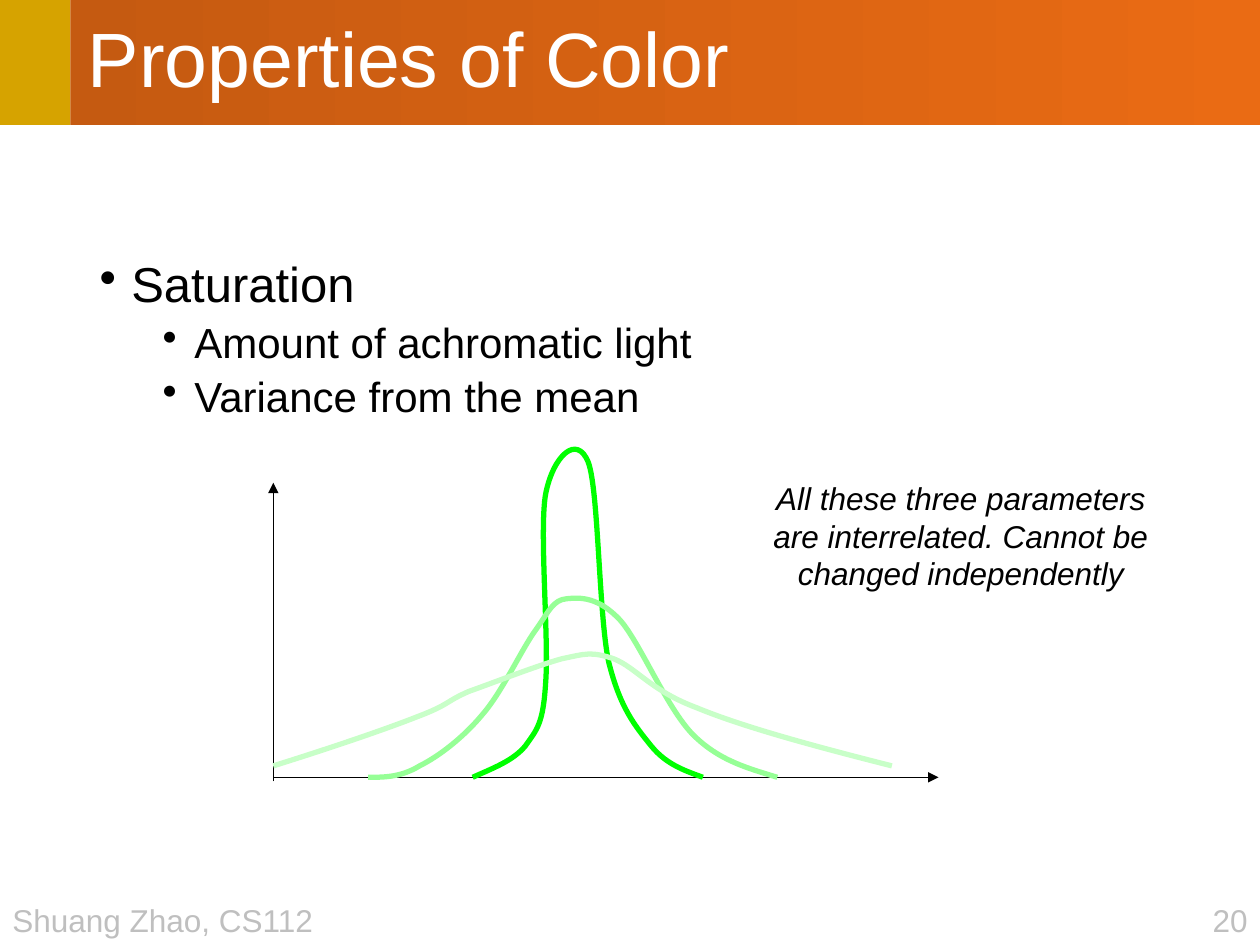
from pptx import Presentation
from pptx import util as u
from pptx.dml.color import RGBColor
from pptx.enum import shapes, text
from pptx.oxml import ns, xmlchemy

FONT = "Arial"
BLACK, WHITE, GREY = "000000", "FFFFFF", "BFBFBF"


def colour(value):
    return RGBColor.from_string(value)


def write(frame, content, size, ink=BLACK, align=text.PP_ALIGN.LEFT, italic=False,
          spacing=None, before=None, margin=0, bullet=False):
    """Fill the frame's empty first paragraph, or append another one."""
    para = frame.paragraphs[0]
    if para.runs:
        para = frame.add_paragraph()
    para.alignment, para.line_spacing = align, spacing
    if before is not None:
        para.space_before = u.Pt(before)
    settings = para._p.get_or_add_pPr()
    settings.set("marL", str(u.Cm(margin)))
    if bullet:
        settings.set("indent", str(u.Cm(-0.64)))
        mark = xmlchemy.OxmlElement("a:buChar")
        mark.set("char", "•")
        settings.append(mark)
    span = para.add_run()
    span.text = content
    span.font.name, span.font.size = FONT, u.Pt(size)
    span.font.italic = italic
    span.font.color.rgb = colour(ink)


deck = Presentation()
deck.slide_width, deck.slide_height = u.Cm(25.4), u.Cm(19.05)
page = deck.slides.add_slide(deck.slide_layouts[6])
items = page.shapes

# Header: gold block and gradient title bar
header_height = u.Cm(2.52)
block_width = u.Cm(1.42)
block = items.add_shape(shapes.MSO_SHAPE.RECTANGLE, 0, 0, block_width, header_height)
block.fill.solid()
block.fill.fore_color.rgb = colour("D6A300")
title = items.add_shape(shapes.MSO_SHAPE.RECTANGLE, block_width, 0,
                        deck.slide_width - block_width, header_height)
title.fill.gradient()
title.fill.gradient_angle = 0
for stop, shade in zip(title.fill.gradient_stops, ("C55A11", "EA6B14")):
    stop.color.rgb = colour(shade)
for bar in (block, title):
    bar.line.fill.background()
    bar.shadow.inherit = False
title.text_frame.vertical_anchor = text.MSO_ANCHOR.MIDDLE
write(title.text_frame, "Properties of Color", 44, ink=WHITE, spacing=0.9, margin=0.1)

# Footer
for content, left, width, align in (
    ("20", 24.1, 1.3, text.PP_ALIGN.RIGHT),
    ("Shuang Zhao, CS112", 0, 6.63, text.PP_ALIGN.LEFT),
):
    box = items.add_textbox(u.Cm(left), u.Cm(18.03), u.Cm(width), u.Cm(1.02))
    box.text_frame.word_wrap = False
    write(box.text_frame, content, 18, ink=GREY, align=align)

# Bulleted list
body = items.add_textbox(u.Cm(0.33), u.Cm(2.79), u.Cm(24.77), u.Cm(15.19)).text_frame
body.word_wrap = True
body.margin_left, body.margin_top = u.Cm(1.68), u.Cm(2.46)
write(body, "Saturation", 28, spacing=0.9, margin=0.64, bullet=True)
for content in ("Amount of achromatic light", "Variance from the mean"):
    write(body, content, 24, spacing=0.9, before=5, margin=1.91, bullet=True)

# Axes
for x1, y1, x2, y2 in ((5.51, 15.75, 5.51, 9.73), (5.51, 15.67, 18.92, 15.67)):
    axis = items.add_connector(shapes.MSO_CONNECTOR.STRAIGHT,
                               u.Cm(x1), u.Cm(y1), u.Cm(x2), u.Cm(y2))
    axis.line.color.rgb = colour(BLACK)
    axis.line.width = u.Pt(0.75)
    arrow = xmlchemy.OxmlElement("a:tailEnd")
    arrow.set("type", "triangle")
    axis.line._get_or_add_ln().append(arrow)
    axis._element.spPr.append(xmlchemy.OxmlElement("a:effectLst"))

# Spectra in cm: a start point, then two control points and an end point per segment
spectra = {
    "00FF00": [
        (9.53, 15.67),
        (9.93, 15.49), (10.34, 15.34), (10.59, 15.04),
        (10.82, 14.71), (10.95, 14.61), (11, 13.77),
        (11.07, 12.9), (10.87, 10.69), (11, 9.96),
        (11.15, 9.19), (11.63, 8.74), (11.86, 9.32),
        (12.07, 9.88), (12.07, 12.4), (12.27, 13.34),
        (12.5, 14.27), (12.8, 14.63), (13.13, 15.04),
        (13.44, 15.42), (13.82, 15.54), (14.17, 15.67),
    ],
    "96FF96": [
        (7.42, 15.67),
        (7.75, 15.67), (8.08, 15.67), (8.46, 15.44),
        (8.86, 15.24), (9.35, 14.86), (9.73, 14.4),
        (10.13, 13.94), (10.52, 13.08), (10.8, 12.7),
        (11.07, 12.32), (11.15, 12.09), (11.43, 12.07),
        (11.71, 12.04), (12.07, 12.04), (12.5, 12.5),
        (12.9, 12.95), (13.44, 14.27), (13.97, 14.81),
        (14.5, 15.34), (15.09, 15.49), (15.67, 15.67),
    ],
    "C8FFC8": [
        (5.51, 15.44),
        (6.63, 15.09), (7.75, 14.71), (8.41, 14.45),
        (9.07, 14.2), (8.97, 14.15), (9.45, 13.94),
        (9.93, 13.77), (10.85, 13.41), (11.33, 13.28),
        (11.81, 13.18), (11.91, 13.13), (12.37, 13.28),
        (12.83, 13.46), (13.11, 13.92), (14.05, 14.27),
        (14.99, 14.66), (16.48, 15.06), (17.98, 15.44),
    ],
}
for shade, points in spectra.items():
    start, *rest = [(u.Cm(x), u.Cm(y)) for x, y in points]
    builder = items.build_freeform(*start)
    builder.add_line_segments(rest, close=False)
    curve = builder.convert_to_shape()
    curve.fill.background()
    curve.line.color.rgb = colour(shade)
    curve.line.width = u.Pt(3)
    curve.shadow.inherit = False
    # Merge each three straight segments into one Bezier segment
    segments = list(curve._element.iter(ns.qn("a:lnTo")))
    for first in range(0, len(segments), 3):
        bezier = xmlchemy.OxmlElement("a:cubicBezTo")
        segments[first].addprevious(bezier)
        for segment in segments[first:first + 3]:
            bezier.append(segment[0])
            segment.getparent().remove(segment)

# Remark
remark = items.add_textbox(u.Cm(15.24), u.Cm(9.53), u.Cm(8.26), u.Cm(2.57)).text_frame
remark.word_wrap = True
write(remark, "All these three parameters are interrelated. Cannot be changed independently",
      18, align=text.PP_ALIGN.CENTER, italic=True)

deck.save("out.pptx")
